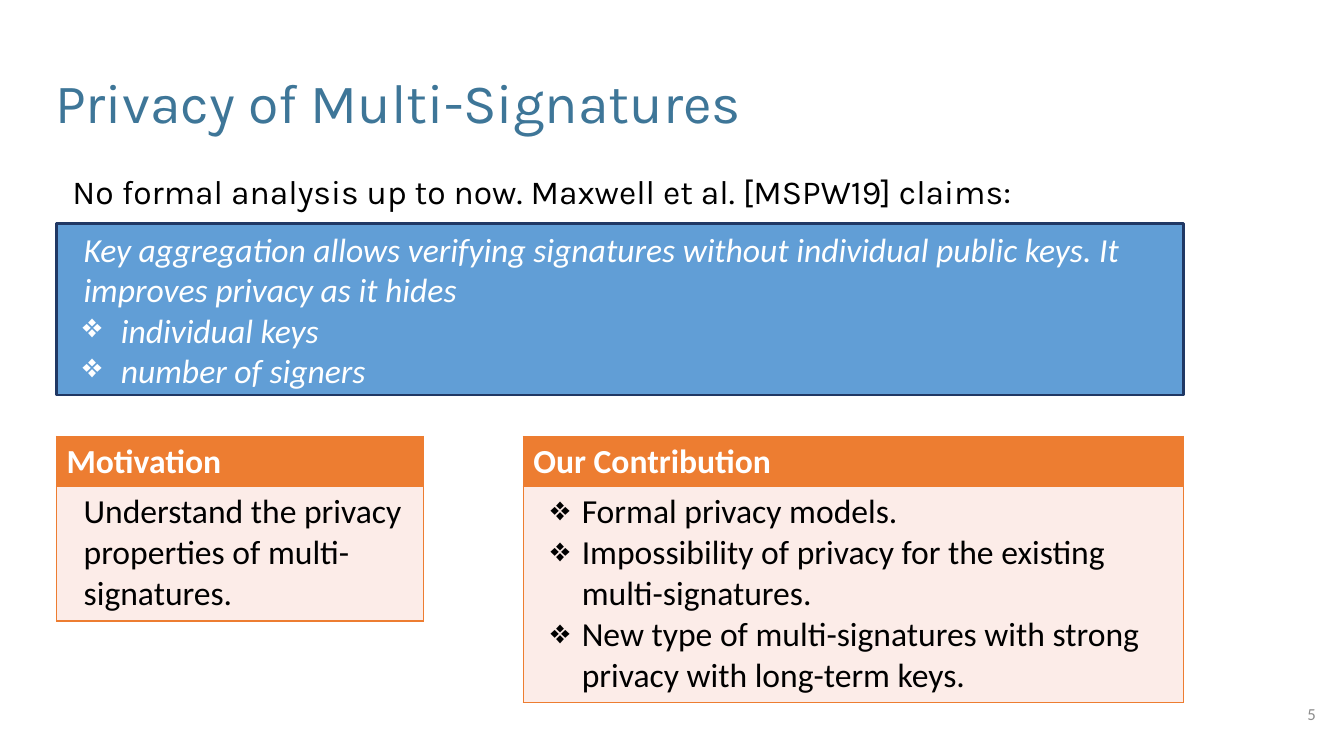
import pptx
import pptx.dml.color
import pptx.enum.shapes
import pptx.enum.text
import pptx.oxml
import pptx.oxml.ns
import pptx.util
from pptx.util import Inches

ORANGE, PINK, WHITE, BLACK = "ED7D31", "FCECE8", "FFFFFF", "000000"
BODY_FONT, HEAD_FONT = "Calibri", "Karla"
LEFT, RIGHT = 0.56, 11.74
TABLE_TOP, HEADER_HEIGHT = 4.33, 0.5


def rgb(value):
    return pptx.dml.color.RGBColor.from_string(value)


def fill_solid(item, color):
    item.fill.solid()
    item.fill.fore_color.rgb = rgb(color)


def add_element(parent, tag, index=None, **attributes):
    element = pptx.oxml.parse_xml(f"<{tag} {pptx.oxml.ns.nsdecls('a')}/>")
    for name, value in attributes.items():
        element.set(name, str(value))
    parent.insert(len(parent) if index is None else index, element)
    return element


def write(frame, lines, size, color, font=BODY_FONT, bold=False, italic=False, spacing=None):
    """Each line is (text, left margin, first-line indent); a hanging line gets a bullet."""
    frame.word_wrap = True
    for number, (text, margin, indent) in enumerate(lines):
        para = frame.add_paragraph() if number else frame.paragraphs[0]
        properties = para._p.get_or_add_pPr()
        properties.set("marL", str(Inches(margin)))
        properties.set("indent", str(Inches(indent)))
        if indent < 0:
            add_element(properties, "a:buChar", char="❖")
        para.alignment = pptx.enum.text.PP_ALIGN.LEFT
        para.line_spacing = spacing
        para.add_run().text = text
        para.font.size = pptx.util.Pt(size)
        para.font.name = font
        para.font.bold = bold
        para.font.italic = italic
        para.font.color.rgb = rgb(color)


def add_text(page, place, text, size, color, indent=0, **style):
    box = page.shapes.add_textbox(*map(Inches, place))
    frame = box.text_frame
    frame.margin_left = frame.margin_right = Inches(0.1)
    frame.margin_top = frame.margin_bottom = Inches(0.1)
    write(frame, [(text, indent, 0)], size, color, **style)
    return frame


def add_quote(page, place, lines):
    box = page.shapes.add_shape(pptx.enum.shapes.MSO_SHAPE.RECTANGLE, *map(Inches, place))
    box.shadow.inherit = False
    fill_solid(box, "5B9BD5")
    color = box._element.spPr.find(".//" + pptx.oxml.ns.qn("a:srgbClr"))
    add_element(color, "a:alpha", val=96000)
    box.line.color.rgb = rgb("203864")
    box.line.width = pptx.util.Pt(2)
    box.text_frame.vertical_anchor = pptx.enum.text.MSO_ANCHOR.MIDDLE
    write(box.text_frame, lines, 24, WHITE, italic=True)


def add_borders(cell, color):
    properties = cell._tc.get_or_add_tcPr()
    for index, side in enumerate("LRTB"):
        line = add_element(properties, f"a:ln{side}", index, w=pptx.util.Pt(1))
        add_element(add_element(line, "a:solidFill"), "a:srgbClr", val=color)


def add_panel(page, left, width, body_height, heading, lines):
    """A one-column table: a coloured heading over a tinted body."""
    table = page.shapes.add_table(
        2, 1, Inches(left), Inches(TABLE_TOP), Inches(width), Inches(HEADER_HEIGHT + body_height)
    ).table
    table.horz_banding = False
    rows = [
        (HEADER_HEIGHT, ORANGE, [(heading, 0, 0)], WHITE, True),
        (body_height, PINK, lines, BLACK, False),
    ]
    for index, (height, fill, content, color, bold) in enumerate(rows):
        table.rows[index].height = Inches(height)
        cell = table.cell(index, 0)
        fill_solid(cell, fill)
        add_borders(cell, ORANGE)
        write(cell.text_frame, content, 24, color, bold=bold)


def main():
    deck = pptx.Presentation()
    deck.slide_width, deck.slide_height = Inches(13.33), Inches(7.5)
    page = deck.slides.add_slide(deck.slide_layouts[6])

    # Title and lead-in
    add_text(page, (0.45, 0.65, 12.42, 0.84), "Privacy of Multi-Signatures",
             39.6, "3E7698", font=HEAD_FONT, spacing=0.9)
    add_text(page, (0.45, 1.64, 12.42, 0.58),
             "No formal analysis up to now. Maxwell et al. [MSPW19] claims:",
             24, BLACK, indent=0.17, font=HEAD_FONT, spacing=0.9)

    # Quoted claim
    add_quote(page, (LEFT, 2.22, RIGHT - LEFT, 1.7), [
        ("Key aggregation allows verifying signatures without individual public keys. "
         "It improves privacy as it hides", 0.17, 0),
        ("individual keys", 0.54, -0.38),
        ("number of signers", 0.54, -0.38),
    ])

    # Motivation and contribution
    add_panel(page, LEFT, 3.64, 1.33, "Motivation", [
        ("Understand the privacy properties of multi-signatures.", 0.17, 0),
    ])
    contributions = [
        "Formal privacy models.",
        "Impossibility of privacy for the existing multi-signatures.",
        "New type of multi-signatures with strong privacy with long-term keys.",
    ]
    add_panel(page, 5.19, RIGHT - 5.19, 2.14, "Our Contribution",
              [(text, 0.48, -0.31) for text in contributions])

    # Page number
    number = add_text(page, (12.35, 6.8, 0.8, 0.57), "5", 12, "8C8C8C")
    number.vertical_anchor = pptx.enum.text.MSO_ANCHOR.MIDDLE
    number.paragraphs[0].alignment = pptx.enum.text.PP_ALIGN.RIGHT

    deck.save("out.pptx")


if __name__ == "__main__":
    main()
